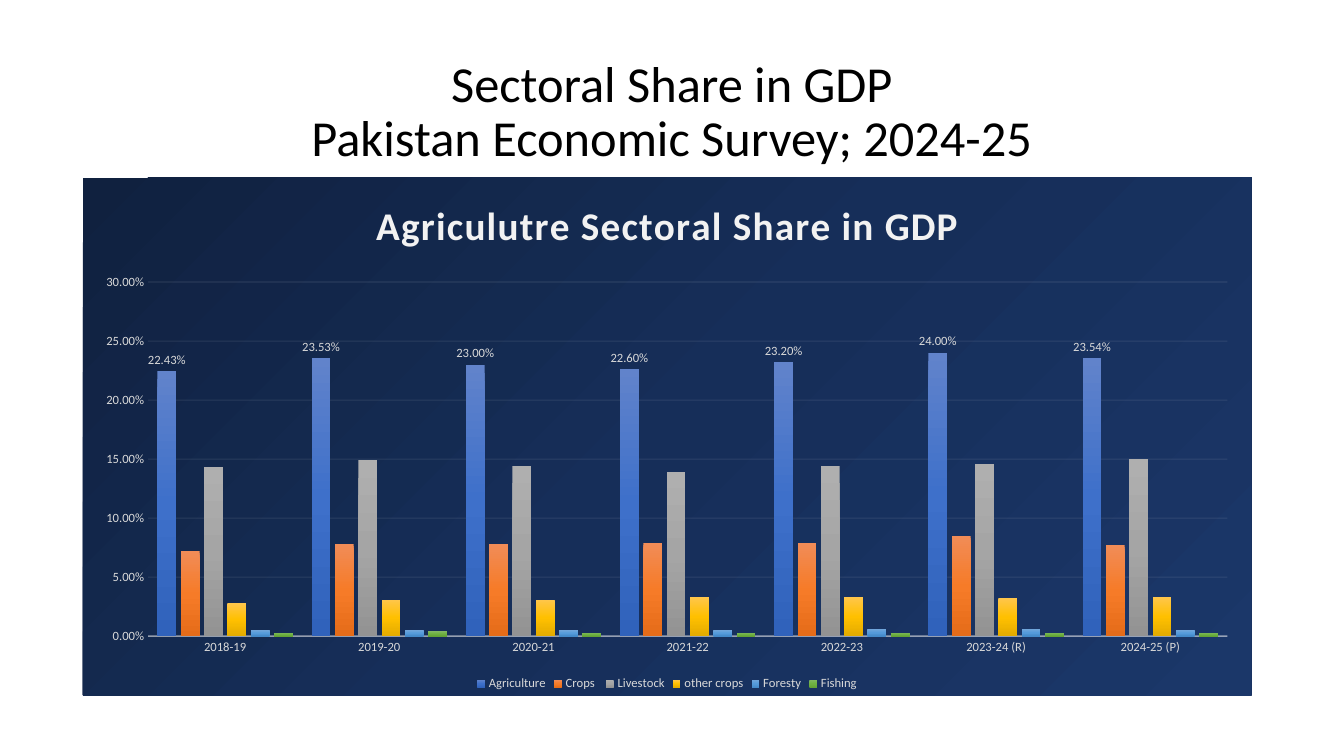
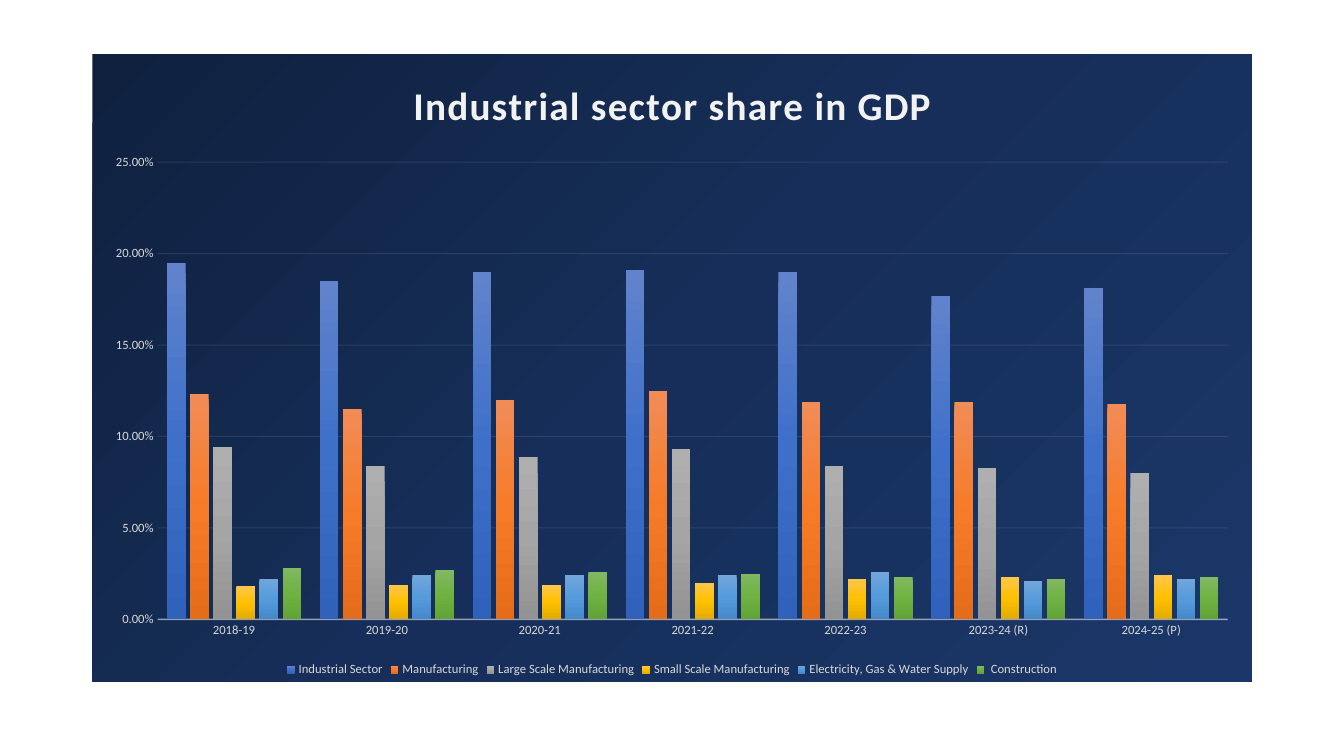
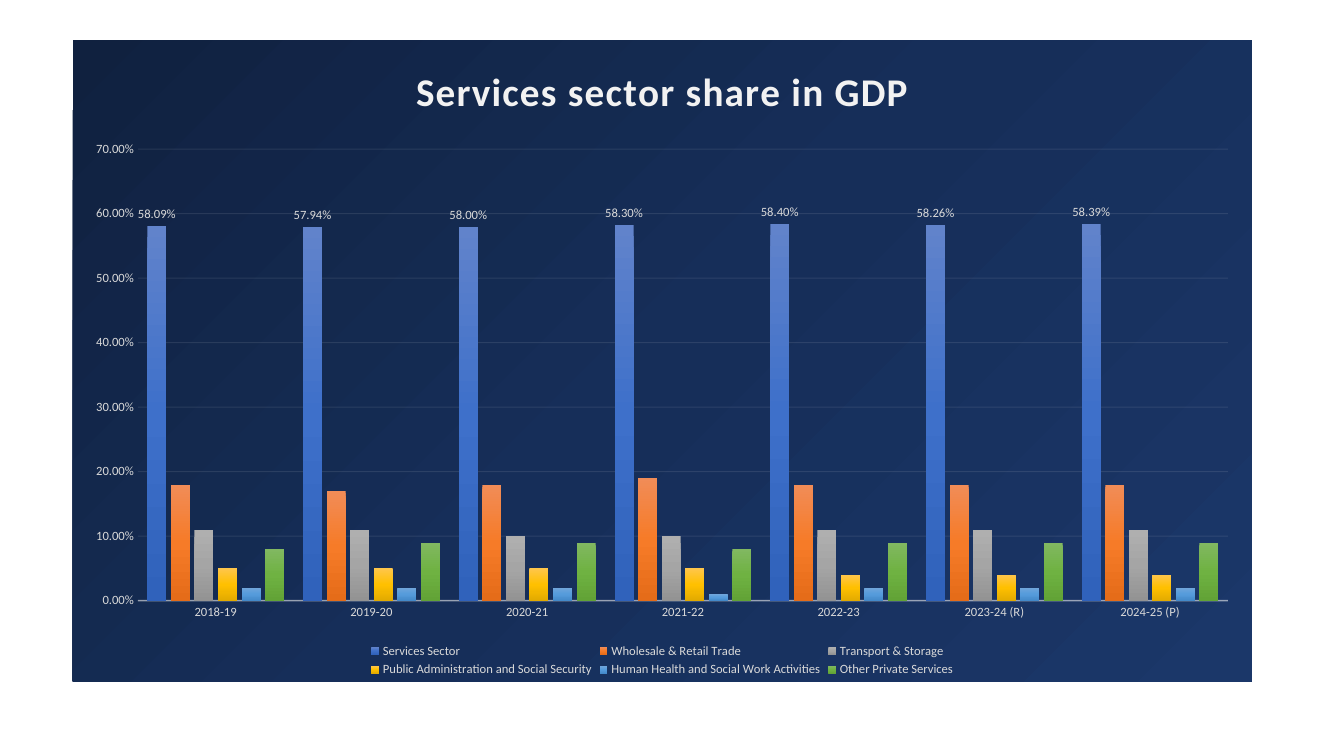
from pptx import Presentation
from pptx.chart.data import CategoryChartData
from pptx.dml.color import RGBColor
from pptx.enum.chart import (XL_CHART_TYPE, XL_LABEL_POSITION,
                             XL_LEGEND_POSITION, XL_TICK_MARK)
from pptx.enum.text import MSO_ANCHOR, PP_ALIGN
from pptx.oxml import parse_xml
from pptx.oxml.ns import nsdecls, qn
from pptx.util import Pt

FONT = "Calibri"
PCT = "0.00%"
BLACK = RGBColor(0x00, 0x00, 0x00)
GREY = RGBColor(0xD9, 0xD9, 0xD9)
PALE = RGBColor(0xF2, 0xF2, 0xF2)


def shades(*codes):
    return [RGBColor.from_string(code) for code in codes]


NAVY = shades("10213F", "162E59", "1B3769")
BARS = [
    shades("6183CB", "3E70CA", "3062BB"),
    shades("F18C57", "F67B28", "E56C19"),
    shades("AFAFAF", "A5A5A5", "939393"),
    shades("FFC64B", "FFC000", "E3AB00"),
    shades("71A6DB", "559BDB", "448ACA"),
    shades("81B861", "6FB242", "62A336"),
]
YEARS = ["2018-19", "2019-20", "2020-21", "2021-22", "2022-23",
         "2023-24 (R)", "2024-25 (P)"]

FARM = {
    "Agriculture": [0.2243, 0.2353, 0.23, 0.226, 0.232, 0.24, 0.2354],
    "Crops ": [0.072, 0.078, 0.078, 0.079, 0.079, 0.085, 0.077],
    "Livestock": [0.143, 0.149, 0.144, 0.139, 0.144, 0.146, 0.15],
    "other crops": [0.028, 0.031, 0.031, 0.033, 0.033, 0.032, 0.033],
    "Foresty": [0.005, 0.005, 0.005, 0.005, 0.006, 0.006, 0.005],
    "Fishing": [0.003, 0.004, 0.003, 0.003, 0.003, 0.003, 0.003],
}
WORKS = {
    "Industrial Sector": [0.195, 0.185, 0.19, 0.191, 0.19, 0.177, 0.181],
    "Manufacturing": [0.123, 0.115, 0.12, 0.125, 0.119, 0.119, 0.118],
    "Large Scale Manufacturing":
        [0.094, 0.084, 0.089, 0.093, 0.084, 0.083, 0.08],
    "Small Scale Manufacturing":
        [0.018, 0.019, 0.019, 0.02, 0.022, 0.023, 0.024],
    "Electricity, Gas & Water Supply":
        [0.022, 0.024, 0.024, 0.024, 0.026, 0.021, 0.022],
    " Construction": [0.028, 0.027, 0.026, 0.025, 0.023, 0.022, 0.023],
}
TRADE = {
    "Services Sector":
        [0.5809, 0.5794, 0.58, 0.583, 0.584, 0.5826, 0.5839],
    "Wholesale & Retail Trade":
        [0.18, 0.17, 0.18, 0.19, 0.18, 0.18, 0.18],
    "Transport & Storage":
        [0.11, 0.11, 0.1, 0.1, 0.11, 0.11, 0.11],
    "Public Administration and Social Security":
        [0.05, 0.05, 0.05, 0.05, 0.04, 0.04, 0.04],
    "Human Health and Social Work Activities":
        [0.02, 0.02, 0.02, 0.01, 0.02, 0.02, 0.02],
    "Other Private Services":
        [0.08, 0.09, 0.09, 0.08, 0.09, 0.09, 0.09],
}


def style(font, size, color, bold=False):
    font.name, font.size, font.bold = FONT, Pt(size), bold
    font.color.rgb = color


def blend(colors, angle):
    """Return a gradient fill with evenly spaced stops."""
    step = 100000 // (len(colors) - 1)
    stops = "".join(
        f'<a:gs pos="{i * step}"><a:srgbClr val="{color}"/></a:gs>'
        for i, color in enumerate(colors))
    return parse_xml(
        f'<a:gradFill {nsdecls("a")} rotWithShape="1"><a:gsLst>{stops}'
        f'</a:gsLst><a:lin ang="{angle * 60000}" scaled="0"/></a:gradFill>')


def rule(line, width, alpha):
    """Draw a pale line with the given opacity in percent."""
    line.width = Pt(width)
    line.color.rgb = PALE
    for tint in line._get_or_add_ln().iter(qn("a:srgbClr")):
        tint.append(parse_xml(
            f'<a:alpha {nsdecls("a")} val="{alpha * 1000}"/>'))


def place(part, index, target, **share):
    """Fix a chart part at shares of the chart's width and height."""
    old = part.find(qn("c:layout"))
    if old is not None:
        part.remove(old)
    inner = f'<c:layoutTarget val="{target}"/>' if target else ""
    modes = "".join(f'<c:{key}Mode val="edge"/>' for key in "xy")
    sizes = "".join(f'<c:{key} val="{val:.4f}"/>'
                    for key, val in share.items())
    part.insert(index, parse_xml(
        f'<c:layout {nsdecls("c")}><c:manualLayout>{inner}{modes}{sizes}'
        '</c:manualLayout></c:layout>'))


def add_head(slide, lines):
    head = slide.shapes.title
    head.left, head.top, head.width, head.height = map(
        Pt, (66, 28.75, 828, 104.4))
    frame = head.text_frame
    frame.word_wrap = True
    frame.vertical_anchor = MSO_ANCHOR.MIDDLE
    para = frame.paragraphs[0]
    para.alignment = PP_ALIGN.CENTER
    para.line_spacing = 0.9
    for i, line in enumerate(lines):
        if i:
            para.add_line_break()
        run = para.add_run()
        run.text = line
        style(run.font, 36, BLACK)


def set_title(chart, text, left):
    title = chart.chart_title
    run = title.text_frame.paragraphs[0].add_run()
    run.text = text
    style(run.font, 28, PALE, True)
    run.font._element.set("spc", "100")
    place(title._element, 1, None, x=left, y=0.028)


def set_axes(chart, top, step):
    for axis in (chart.category_axis, chart.value_axis):
        axis.major_tick_mark = axis.minor_tick_mark = XL_TICK_MARK.NONE
        style(axis.tick_labels.font, 9, GREY)
    rule(chart.category_axis.format.line, 1, 54)
    value = chart.value_axis
    value.minimum_scale, value.maximum_scale = 0, top
    value.major_unit = step
    value.tick_labels.number_format = PCT
    value.tick_labels.number_format_is_linked = False
    value.format.line.fill.background()
    value.has_major_gridlines = True
    rule(value.major_gridlines.format.line, 0.75, 10)


def set_bars(chart, tagged):
    plot = chart.plots[0]
    plot.gap_width, plot.overlap = 100, -24
    plot.vary_by_categories = False
    for bar, colors in zip(plot.series, BARS):
        bar.invert_if_negative = False
        bar._element.get_or_add_spPr().insert(0, blend(colors, 90))
    if tagged:
        tags = plot.series[0].data_labels
        tags.show_value = True
        tags.position = XL_LABEL_POSITION.OUTSIDE_END
        tags.number_format, tags.number_format_is_linked = PCT, False
        style(tags.font, 9, GREY)


def add_bars(slide, text, rows, box, left, room, top, step, tagged=True):
    """Add a column chart; left places its title, room is kept
    above and below the plot."""
    data = CategoryChartData(number_format=PCT)
    data.categories = YEARS
    for name, vals in rows.items():
        data.add_series(name, vals)
    chart = slide.shapes.add_chart(
        XL_CHART_TYPE.COLUMN_CLUSTERED, *map(Pt, box), data).chart
    wide, high = box[2:]
    over, under = room
    style(chart.font, 10, BLACK)
    back = parse_xml(f'<c:spPr {nsdecls("c", "a")}><a:ln><a:noFill/>'
                     '</a:ln></c:spPr>')
    back.insert(0, blend(NAVY, 45))
    space = chart._chartSpace
    space.find(qn("c:chart")).addnext(back)
    set_title(chart, text, left / wide)
    set_axes(chart, top, step)
    set_bars(chart, tagged)
    chart.has_legend = True
    chart.legend.position = XL_LEGEND_POSITION.BOTTOM
    chart.legend.include_in_layout = False
    style(chart.legend.font, 9, GREY)
    area = next(space.iter(qn("c:plotArea")))
    place(area, 0, "inner", x=46.6 / wide, y=over / high,
          w=(wide - 63.6) / wide, h=(high - over - under) / high)


def main():
    deck = Presentation()
    deck.slide_width, deck.slide_height = Pt(960), Pt(540)
    titled, blank = deck.slide_layouts[5], deck.slide_layouts[6]

    slide = deck.slides.add_slide(titled)
    add_head(slide, ["Sectoral Share in GDP",
                     "Pakistan Economic Survey; 2024-25"])
    add_bars(slide, "Agriculutre Sectoral Share in GDP", FARM,
             (59.2, 126.9, 834.6, 369.6), 204.5, (74.6, 42), 0.3, 0.05)

    add_bars(deck.slides.add_slide(blank),
             "Industrial sector share in GDP", WORKS,
             (66, 38.9, 828, 447.6), 224.2, (77, 44), 0.25, 0.05,
             tagged=False)

    add_bars(deck.slides.add_slide(blank),
             "Services sector share in GDP", TRADE,
             (51.9, 28.8, 842.3, 457.7), 240.2, (77.8, 57.4), 0.7, 0.1)

    deck.save("out.pptx")


if __name__ == "__main__":
    main()
